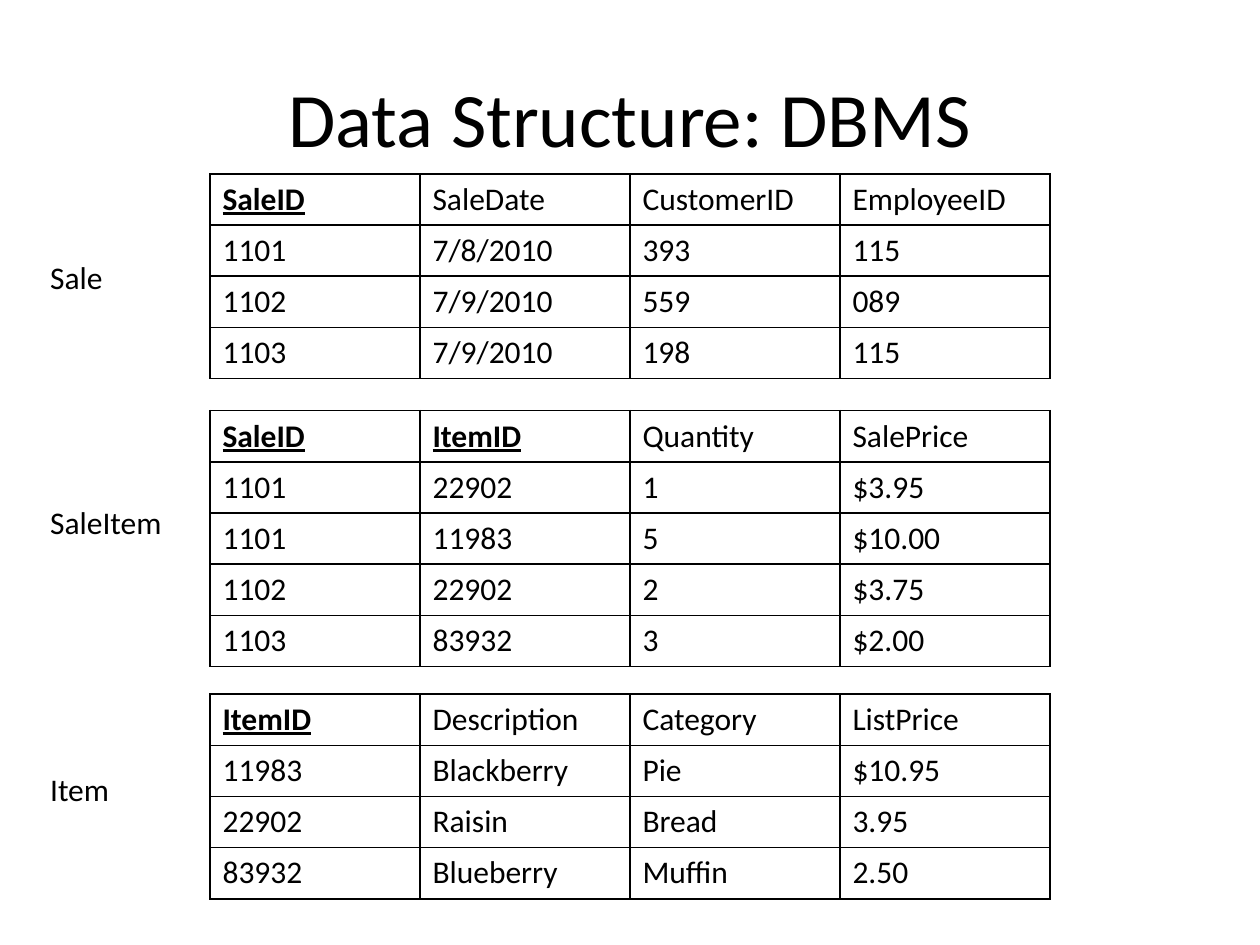
from lxml.etree import SubElement
from pptx import Presentation
from pptx.dml.color import RGBColor
from pptx.enum.text import MSO_ANCHOR, MSO_AUTO_SIZE, PP_ALIGN
from pptx.oxml.ns import qn
from pptx.util import Inches, Pt

BLACK = RGBColor(0x00, 0x00, 0x00)
BODY_FONT = {"name": "Calibri", "size": Pt(18), "bold": False, "underline": False}
KEY_FONT = {**BODY_FONT, "bold": True, "underline": True}
TITLE_FONT = {**BODY_FONT, "size": Pt(44)}

# Six equal columns across the slide; the tables fill the middle four
SLIDE_WIDTH, SLIDE_HEIGHT = Inches(10), Inches(7.5)
COLUMN_WIDTH = SLIDE_WIDTH // 6
ROW_HEIGHT = Inches(6.5) // 16
LABEL_LEFT, LABEL_HEIGHT = Inches(0.3), Inches(0.4)

# Each relation: name, label top, label width, table top, number of key columns, rows
RELATIONS = [
    ("Sale", 2, 0.62, 1.38, 1, [
        ("SaleID", "SaleDate", "CustomerID", "EmployeeID"),
        ("1101", "7/8/2010", "393", "115"),
        ("1102", "7/9/2010", "559", "089"),
        ("1103", "7/9/2010", "198", "115"),
    ]),
    ("SaleItem", 3.94, 1.1, 3.26, 2, [
        ("SaleID", "ItemID", "Quantity", "SalePrice"),
        ("1101", "22902", "1", "$3.95"),
        ("1101", "11983", "5", "$10.00"),
        ("1102", "22902", "2", "$3.75"),
        ("1103", "83932", "3", "$2.00"),
    ]),
    ("Item", 6.06, 0.67, 5.51, 1, [
        ("ItemID", "Description", "Category", "ListPrice"),
        ("11983", "Blackberry", "Pie", "$10.95"),
        ("22902", "Raisin", "Bread", "3.95"),
        ("83932", "Blueberry", "Muffin", "2.50"),
    ]),
]


def write_text(text_frame, text, font_format):
    paragraph = text_frame.paragraphs[0]
    run = paragraph.add_run()
    run.text = text
    for attribute, value in font_format.items():
        setattr(run.font, attribute, value)
    run.font.color.rgb = BLACK
    return paragraph


def add_title(slide, text):
    title = slide.shapes.add_textbox(Inches(0.5), Inches(0.3), Inches(9), Inches(1.25))
    title.text_frame.word_wrap = True
    title.text_frame.vertical_anchor = MSO_ANCHOR.MIDDLE
    write_text(title.text_frame, text, TITLE_FONT).alignment = PP_ALIGN.CENTER


def add_label(slide, name, top, width):
    label = slide.shapes.add_textbox(LABEL_LEFT, Inches(top), Inches(width), LABEL_HEIGHT)
    label.text_frame.word_wrap = False
    label.text_frame.auto_size = MSO_AUTO_SIZE.SHAPE_TO_FIT_TEXT
    write_text(label.text_frame, name, BODY_FONT)


def add_borders(cell):
    properties = cell._tc.get_or_add_tcPr()
    for side in ("a:lnL", "a:lnR", "a:lnT", "a:lnB"):
        border = SubElement(properties, qn(side), w=str(Pt(1)))
        fill = SubElement(border, qn("a:solidFill"))
        SubElement(fill, qn("a:srgbClr"), val=str(BLACK))


def add_relation_table(slide, top, key_count, rows):
    column_count = len(rows[0])
    table = slide.shapes.add_table(
        len(rows), column_count, COLUMN_WIDTH, Inches(top),
        COLUMN_WIDTH * column_count, ROW_HEIGHT * len(rows)).table
    table.first_row = table.horz_banding = False
    for column in table.columns:
        column.width = COLUMN_WIDTH
    for row_index, values in enumerate(rows):
        table.rows[row_index].height = ROW_HEIGHT
        for column_index, value in enumerate(values):
            cell = table.cell(row_index, column_index)
            is_key = row_index == 0 and column_index < key_count
            write_text(cell.text_frame, value, KEY_FONT if is_key else BODY_FONT)
            # Borders come before the fill in the cell properties
            add_borders(cell)
            cell.fill.background()


def main():
    presentation = Presentation()
    presentation.slide_width, presentation.slide_height = SLIDE_WIDTH, SLIDE_HEIGHT
    slide = presentation.slides.add_slide(presentation.slide_layouts[6])

    add_title(slide, "Data Structure: DBMS")

    # Relations, each with its name at the left
    for name, label_top, label_width, table_top, key_count, rows in RELATIONS:
        add_relation_table(slide, table_top, key_count, rows)
        add_label(slide, name, label_top, label_width)

    presentation.save("out.pptx")


if __name__ == "__main__":
    main()
